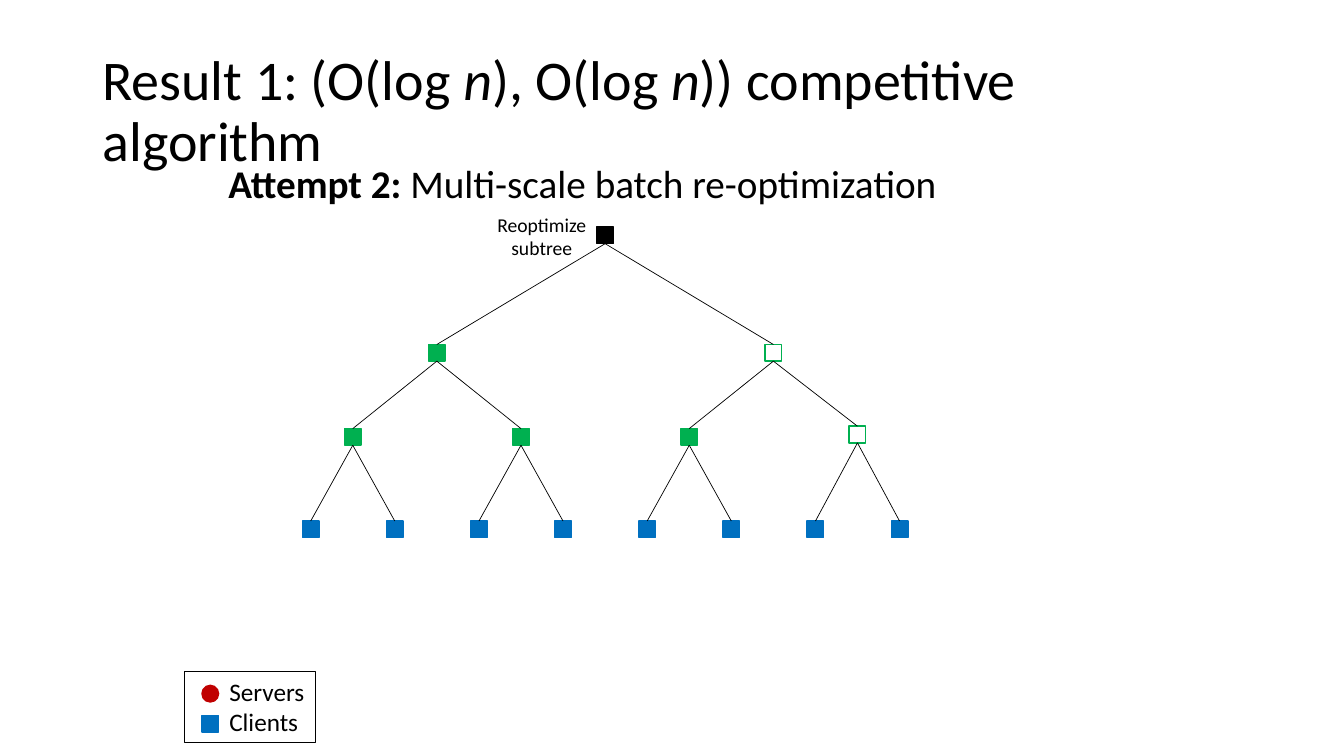
from lxml import etree
from pptx import Presentation
from pptx.dml.color import RGBColor
from pptx.enum.shapes import MSO_CONNECTOR, MSO_SHAPE
from pptx.enum.text import MSO_ANCHOR, MSO_AUTO_SIZE, PP_ALIGN
from pptx.oxml.ns import qn
from pptx.util import Cm, Pt

RED, BLUE, GREEN, BLACK = "C00000", "0070C0", "00B050", "000000"
SIZE = 0.42


def add_mark(shapes, kind, x, y, w, h, color, filled=True, weight=1):
    sp = shapes.add_shape(kind, Cm(x), Cm(y), Cm(w), Cm(h))
    sp.shadow.inherit = False
    if filled:
        sp.fill.solid()
        sp.fill.fore_color.rgb = RGBColor.from_string(color)
    else:
        sp.fill.background()
    sp.line.color.rgb = RGBColor.from_string(color)
    sp.line.width = Pt(weight)
    return sp


def write(p, runs, size, align=PP_ALIGN.LEFT):
    p.alignment = align
    p.font.name = "Calibri"
    p.font.size = Pt(size)
    p.font.color.rgb = RGBColor.from_string(BLACK)
    for text, style in runs:
        r = p.add_run()
        r.text = text
        if style:
            setattr(r.font, style, True)


prs = Presentation()
prs.slide_width, prs.slide_height = Cm(33.87), Cm(19.05)
s = prs.slides.add_slide(prs.slide_layouts[1])

title, body = s.placeholders
headings = [
    (title, (2.33, 1.01, 29.21, 3.68), MSO_ANCHOR.MIDDLE, 40, 0,
     [("Result 1: (O(log ", None), ("n", "italic"), ("), O(log ", None),
      ("n", "italic"), (")) competitive algorithm", None)]),
    (body, (5.5, 4.02, 22.86, 2.36), MSO_ANCHOR.TOP, 28, 10,
     [("Attempt 2:", "bold"), (" Multi-scale batch re-optimization", None)]),
]
for sp, box, anchor, size, before, runs in headings:
    sp.left, sp.top, sp.width, sp.height = map(Cm, box)
    tf = sp.text_frame
    tf.auto_size = MSO_AUTO_SIZE.NONE
    tf.vertical_anchor = anchor
    p = tf.paragraphs[0]
    p.line_spacing = 0.9
    p.space_before = Pt(before)
    write(p, runs, size)
pPr = body.text_frame.paragraphs[0]._p.get_or_add_pPr()
pPr.set("marL", "0")
pPr.set("indent", "0")
pPr.insert_element_before(etree.Element(qn("a:buNone")), "a:tabLst", "a:defRPr")

legend = s.shapes.add_group_shape()
add_mark(legend.shapes, MSO_SHAPE.OVAL, 5.09, 17.27, SIZE, SIZE, RED)
add_mark(legend.shapes, MSO_SHAPE.RECTANGLE, 5.09, 18.03, SIZE, SIZE, BLUE)
frame = add_mark(legend.shapes, MSO_SHAPE.RECTANGLE, 4.66, 16.92, 3.3, 1.8, BLACK, False, 0.75)
tf = frame.text_frame
tf.word_wrap = False
tf.margin_left = Cm(1.12)
tf.vertical_anchor = MSO_ANCHOR.TOP
write(tf.paragraphs[0], [("Servers", None)], 18)
write(tf.add_paragraph(), [("Clients", None)], 18)

center, tree_width = 15.25, 16.96
level_tops = [5.72, 8.68, 10.8, 13.13]
level_colors = [BLACK, GREEN, GREEN, BLUE]
outlined = {(1, 1), (2, 3)}
nodes = {}
for level, (top, color) in enumerate(zip(level_tops, level_colors)):
    count = 2 ** level
    for i in range(count):
        x = center + (i - (count - 1) / 2) * tree_width / count - SIZE / 2
        y = 10.74 if (level, i) == (2, 3) else top
        nodes[level, i] = add_mark(s.shapes, MSO_SHAPE.RECTANGLE, x, y, SIZE, SIZE,
                                   color, (level, i) not in outlined)

for (level, i), node in nodes.items():
    if level:
        edge = s.shapes.add_connector(MSO_CONNECTOR.STRAIGHT, 0, 0, 0, 0)
        edge.begin_connect(nodes[level - 1, i // 2], 2)
        edge.end_connect(node, 0)
        edge.line.color.rgb = RGBColor.from_string(BLACK)
        edge.line.width = Pt(0.5)
        etree.SubElement(edge._element.spPr, qn("a:effectLst"))

note = s.shapes.add_textbox(Cm(12.27), Cm(5.23), Cm(2.77), Cm(1.45))
tf = note.text_frame
tf.word_wrap = False
write(tf.paragraphs[0], [("Reoptimize", None)], 14, PP_ALIGN.CENTER)
write(tf.add_paragraph(), [("subtree", None)], 14, PP_ALIGN.CENTER)

prs.save("out.pptx")
